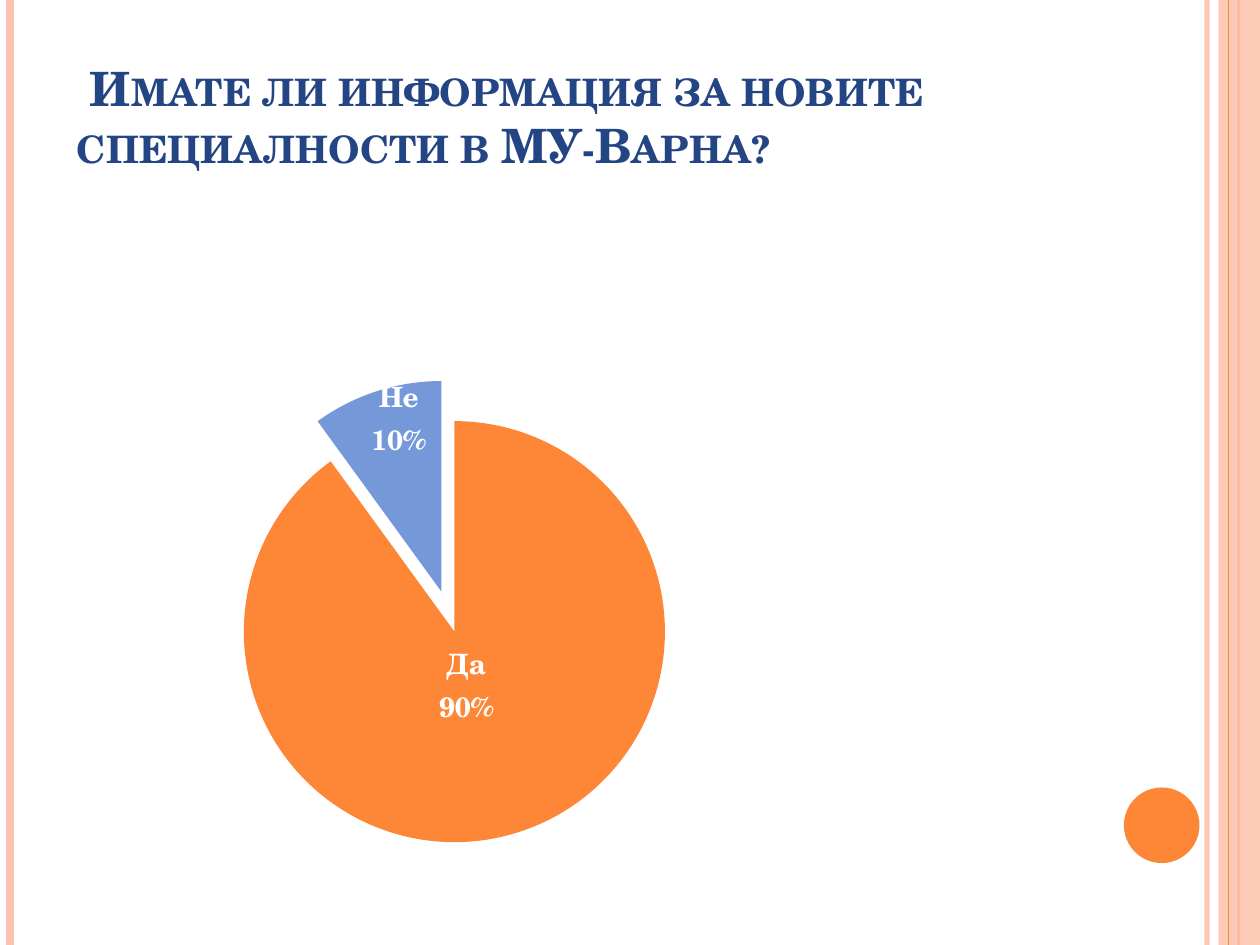
from copy import deepcopy
from typing import NamedTuple

from lxml.etree import SubElement
from pptx import Presentation
from pptx.chart.data import CategoryChartData
from pptx.dml.color import RGBColor
from pptx.enum.chart import XL_CHART_TYPE, XL_LABEL_POSITION
from pptx.enum.shapes import MSO_CONNECTOR, MSO_SHAPE
from pptx.enum.text import MSO_ANCHOR, PP_ALIGN
from pptx.oxml import parse_xml
from pptx.oxml.ns import nsdecls, qn
from pptx.util import Pt

COLORS = {
    "peach": "FEC3AE",
    "orange": "FE8637",
    "blue": "7598D9",
    "navy": "244583",
    "white": "FFFFFF",
    "black": "000000",
}
FONT = "TeX Gyre Schola"
SLIDE_WIDTH, SLIDE_HEIGHT = 720, 540


class Stripe(NamedTuple):
    x: float
    weight: float
    color: str
    opacity: int = 100


class Ornament(NamedTuple):
    kind: MSO_SHAPE
    left: float
    top: float
    width: float
    height: float
    color: str
    opacity: int = 100


class Slice(NamedTuple):
    name: str
    value: int
    color: str
    label_dx: float
    label_dy: float


BACK_STRIPES = [
    Stripe(689.76, 3, "peach", 93),
    Stripe(5.76, 4.5, "peach"),
    Stripe(707.76, 1.5, "orange"),
]
SIDE_BAND = Ornament(MSO_SHAPE.RECTANGLE, 696.24, 0, 23.76, SLIDE_HEIGHT, "peach", 87)
FRONT_STRIPE = Stripe(702, 0.75, "orange")
DISC = Ornament(MSO_SHAPE.OVAL, 642.24, 450, 43.2, 43.2, "orange")
SLICES = [
    Slice("Да", 90, "orange", -0.02, -0.07),
    Slice("Не", 10, "blue", -0.01, -0.11),
]


def rgb(name: str) -> RGBColor:
    return RGBColor.from_string(COLORS[name])


def set_opacity(shape, percent: int) -> None:
    if percent < 100:
        color = next(shape._element.spPr.iter(qn("a:srgbClr")))
        SubElement(color, qn("a:alpha"), val=str(percent * 1000))


def add_stripe(slide, stripe: Stripe) -> None:
    line = slide.shapes.add_connector(
        MSO_CONNECTOR.STRAIGHT, Pt(stripe.x), Pt(0), Pt(stripe.x), Pt(SLIDE_HEIGHT)
    )
    line.line.width = Pt(stripe.weight)
    line.line.color.rgb = rgb(stripe.color)
    set_opacity(line, stripe.opacity)
    SubElement(line._element.spPr, qn("a:effectLst"))


def add_ornament(slide, ornament: Ornament) -> None:
    shape = slide.shapes.add_shape(
        ornament.kind, Pt(ornament.left), Pt(ornament.top),
        Pt(ornament.width), Pt(ornament.height),
    )
    shape.shadow.inherit = False
    shape.fill.solid()
    shape.fill.fore_color.rgb = rgb(ornament.color)
    shape.line.fill.background()
    set_opacity(shape, ornament.opacity)


def format_title(title) -> None:
    title.left, title.top, title.width, title.height = Pt(36.72), Pt(48.96), Pt(588.24), Pt(85.68)
    frame = title.text_frame
    frame.text = "Имате ли информация за новите специалности в МУ-Варна?"
    frame.word_wrap = True
    frame.vertical_anchor = MSO_ANCHOR.BOTTOM
    frame.margin_bottom = Pt(36)
    paragraph = frame.paragraphs[0]
    paragraph.alignment = PP_ALIGN.LEFT
    paragraph.line_spacing = 1.0
    paragraph.space_before = Pt(0)
    paragraph._p.get_or_add_pPr().set("indent", str(Pt(7.5)))
    font = paragraph.runs[0].font
    font.name, font.size, font.bold = FONT, Pt(27), True
    font.color.rgb = rgb("navy")
    font._element.set("cap", "small")


def manual_layout(x: float, y: float, extra: str = ""):
    return parse_xml(
        f'<c:layout {nsdecls("c")}><c:manualLayout>{extra}'
        f'<c:x val="{x}"/><c:y val="{y}"/></c:manualLayout></c:layout>'
    )


def set_plot_area(chart, width: float, height: float) -> None:
    """Centre the plot at a size given as fractions of the chart."""
    plot_area = chart._chartSpace.chart.plotArea
    for old_layout in plot_area.findall(qn("c:layout")):
        plot_area.remove(old_layout)
    layout = manual_layout(
        (1 - width) / 2, (1 - height) / 2,
        '<c:layoutTarget val="inner"/><c:xMode val="edge"/><c:yMode val="edge"/>',
    )
    for tag, value in (("c:w", width), ("c:h", height)):
        SubElement(layout[0], qn(tag), val=str(value))
    plot_area.insert(0, layout)


def format_labels(series) -> None:
    """Show category and percentage, shifting each label by its slice's offset."""
    labels = series.data_labels
    labels.show_category_name = labels.show_percentage = True
    labels.show_value = False
    labels.position = XL_LABEL_POSITION.CENTER
    font = labels.font
    font.name, font.size, font.bold = FONT, Pt(16), True
    font.color.rgb = rgb("white")
    group = labels._element
    separator = parse_xml(f'<c:separator {nsdecls("c")}>\n</c:separator>')
    for old_separator in group.findall(qn("c:separator")):
        group.remove(old_separator)
    last_flag = group.findall(qn("c:showBubbleSize")) or group.findall(qn("c:showPercent"))
    last_flag[-1].addnext(separator)
    shared = [
        child for child in group
        if child.tag not in (qn("c:showLeaderLines"), qn("c:leaderLines"))
    ]
    for index, piece in enumerate(SLICES):
        label = parse_xml(f'<c:dLbl {nsdecls("c")}><c:idx val="{index}"/></c:dLbl>')
        label.append(manual_layout(piece.label_dx, piece.label_dy))
        label.extend(deepcopy(shared))
        group.insert(index, label)


def add_pie(slide) -> None:
    data = CategoryChartData()
    data.categories = [piece.name for piece in SLICES]
    data.add_series("Series 1", [piece.value for piece in SLICES])
    chart = slide.shapes.add_chart(
        XL_CHART_TYPE.PIE, Pt(-38.16), Pt(157.68), Pt(588.24), Pt(383.76), data
    ).chart
    chart.has_legend = chart.has_title = False
    chart.font.name, chart.font.size = FONT, Pt(10)
    chart.font.color.rgb = rgb("black")
    plot = chart.plots[0]
    plot.vary_by_categories = True
    series = plot.series[0]
    for index, piece in enumerate(SLICES):
        point_format = series.points[index].format
        point_format.fill.solid()
        point_format.fill.fore_color.rgb = rgb(piece.color)
        point_format.line.fill.background()
    explosion = parse_xml(f'<c:explosion {nsdecls("c")} val="10"/>')
    series._element.find(qn("c:dPt")).addprevious(explosion)
    format_labels(series)
    set_plot_area(chart, 0.45, 0.69)


def main() -> None:
    presentation = Presentation()
    presentation.slide_width, presentation.slide_height = Pt(SLIDE_WIDTH), Pt(SLIDE_HEIGHT)
    slide = presentation.slides.add_slide(presentation.slide_layouts[5])
    for stripe in BACK_STRIPES:
        add_stripe(slide, stripe)
    add_ornament(slide, SIDE_BAND)
    add_stripe(slide, FRONT_STRIPE)
    add_ornament(slide, DISC)
    format_title(slide.shapes.title)
    add_pie(slide)
    presentation.save("out.pptx")


if __name__ == "__main__":
    main()
